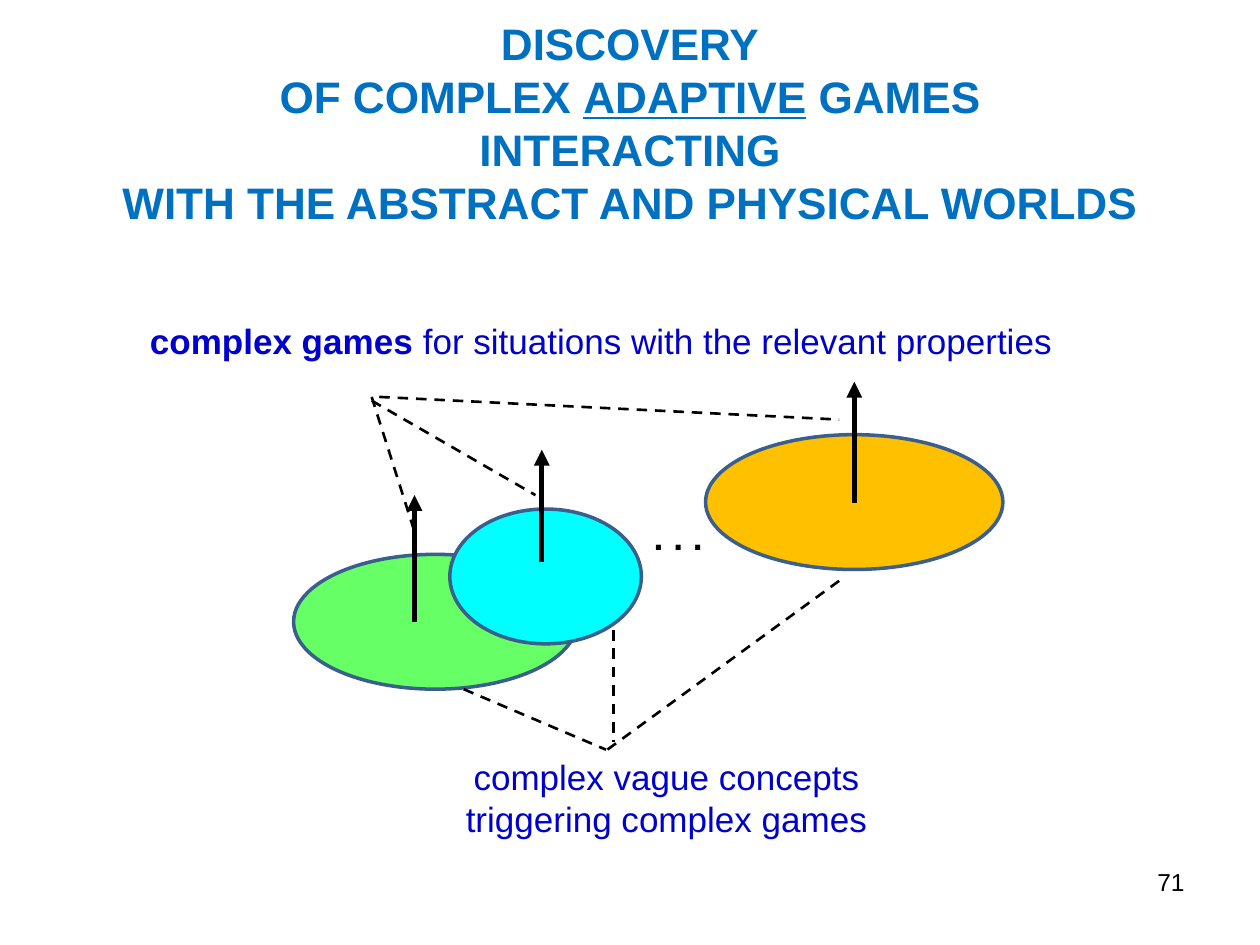
from lxml.etree import SubElement
from pptx import Presentation
from pptx.dml.color import RGBColor
from pptx.enum.dml import MSO_LINE
from pptx.enum.shapes import MSO_CONNECTOR, MSO_SHAPE
from pptx.enum.text import MSO_ANCHOR, PP_ALIGN
from pptx.oxml.ns import qn
from pptx.util import Inches, Pt

TITLE_BLUE, TEXT_BLUE, BLACK, OUTLINE = "0070C0", "0000CC", "000000", "3A5F8C"


def color(value):
    return RGBColor.from_string(value)


class SlideBuilder:
    font_name = "Arial"

    def __init__(self, slide):
        self.slide = slide

    def text(self, box, runs, size, text_color, align=PP_ALIGN.LEFT,
             anchor=MSO_ANCHOR.TOP, spacing=None):
        """Each run is (text, format values); a newline becomes a line break."""
        shape = self.slide.shapes.add_textbox(*map(Inches, box))
        frame = shape.text_frame
        frame.word_wrap = True
        frame.vertical_anchor = anchor
        paragraph = frame.paragraphs[0]
        paragraph.alignment = align
        if spacing:
            paragraph.line_spacing = Pt(spacing)
        for content, values in runs:
            for index, line in enumerate(content.split("\n")):
                if index:
                    paragraph.add_line_break()
                run = paragraph.add_run()
                run.text = line
                run.font.color.rgb = color(text_color)
                style = {"name": self.font_name, "size": Pt(size), **values}
                for name, value in style.items():
                    setattr(run.font, name, value)

    def ellipse(self, box, fill):
        shape = self.slide.shapes.add_shape(MSO_SHAPE.OVAL, *map(Inches, box))
        shape.shadow.inherit = False
        shape.fill.solid()
        shape.fill.fore_color.rgb = color(fill)
        shape.line.color.rgb = color(OUTLINE)
        shape.line.width = Pt(2)

    def line(self, start, end, width, dash=None, arrow=False):
        connector = self.slide.shapes.add_connector(
            MSO_CONNECTOR.STRAIGHT, *map(Inches, (*start, *end)))
        connector.line.color.rgb = color(BLACK)
        for name, value in {"width": Pt(width), "dash_style": dash}.items():
            setattr(connector.line, name, value)
        if arrow:
            SubElement(connector.line._get_or_add_ln(), qn("a:tailEnd"), type="triangle")
        SubElement(connector._element.spPr, qn("a:effectLst"))

    def arrow(self, x, bottom, top):
        self.line((x, bottom), (x, top), 3, arrow=True)

    def dashed(self, start, end):
        self.line(start, end, 1.5, dash=MSO_LINE.DASH)


def main():
    presentation = Presentation()
    presentation.slide_width, presentation.slide_height = Inches(10), Inches(7.5)
    builder = SlideBuilder(presentation.slides.add_slide(presentation.slide_layouts[6]))

    # Title
    bold = {"bold": True}
    builder.text((0, 0, 10, 1.94), [
        ("DISCOVERY\nOF COMPLEX ", bold),
        ("ADAPTIVE", {"bold": True, "underline": True}),
        (" GAMES\nINTERACTING\nWITH THE ABSTRACT AND PHYSICAL WORLDS", bold),
    ], 25.2, TITLE_BLUE, PP_ALIGN.CENTER, MSO_ANCHOR.MIDDLE, spacing=30.3)

    # Concepts, each with an arrow to its game
    for box, fill in (
        ((2.33, 4.4, 2.25, 1.07), "66FF66"),
        ((3.57, 4.04, 1.52, 1.07), "00FFFF"),
        ((5.6, 3.45, 2.36, 1.07), "FFC000"),
    ):
        builder.ellipse(box, fill)
    for x, bottom, top in ((3.29, 4.94, 3.93), (4.3, 4.46, 3.57), (6.78, 3.99, 3.03)):
        builder.arrow(x, bottom, top)
    builder.text((5.09, 4.04, 0.73, 0.44), [(". . .", bold)], 20.2, BLACK)

    # Concepts label and its pointers
    builder.text((3.2, 5.95, 4.18, 0.77),
                 [("complex vague concepts triggering complex games", {})],
                 20, TEXT_BLUE, PP_ALIGN.CENTER)
    for start, end in (
        ((4.87, 5), (4.87, 5.89)),
        ((3.68, 5.47), (4.81, 5.95)),
        ((6.66, 4.61), (4.82, 5.95)),
    ):
        builder.dashed(start, end)

    # Games label and its pointers
    builder.text((0.67, 2.49, 8.28, 0.44), [
        ("complex games ", bold),
        ("for situations with the relevant properties ", {}),
    ], 20, TEXT_BLUE, PP_ALIGN.CENTER)
    for start, end in (
        ((2.95, 3.15), (3.29, 4.22)),
        ((2.95, 3.18), (4.25, 3.93)),
        ((3.01, 3.15), (6.66, 3.33)),
    ):
        builder.dashed(start, end)

    # Slide number
    builder.text((7.17, 6.83, 2.33, 0.52), [("71", {})], 14, BLACK, PP_ALIGN.RIGHT)

    presentation.save("out.pptx")


if __name__ == "__main__":
    main()
